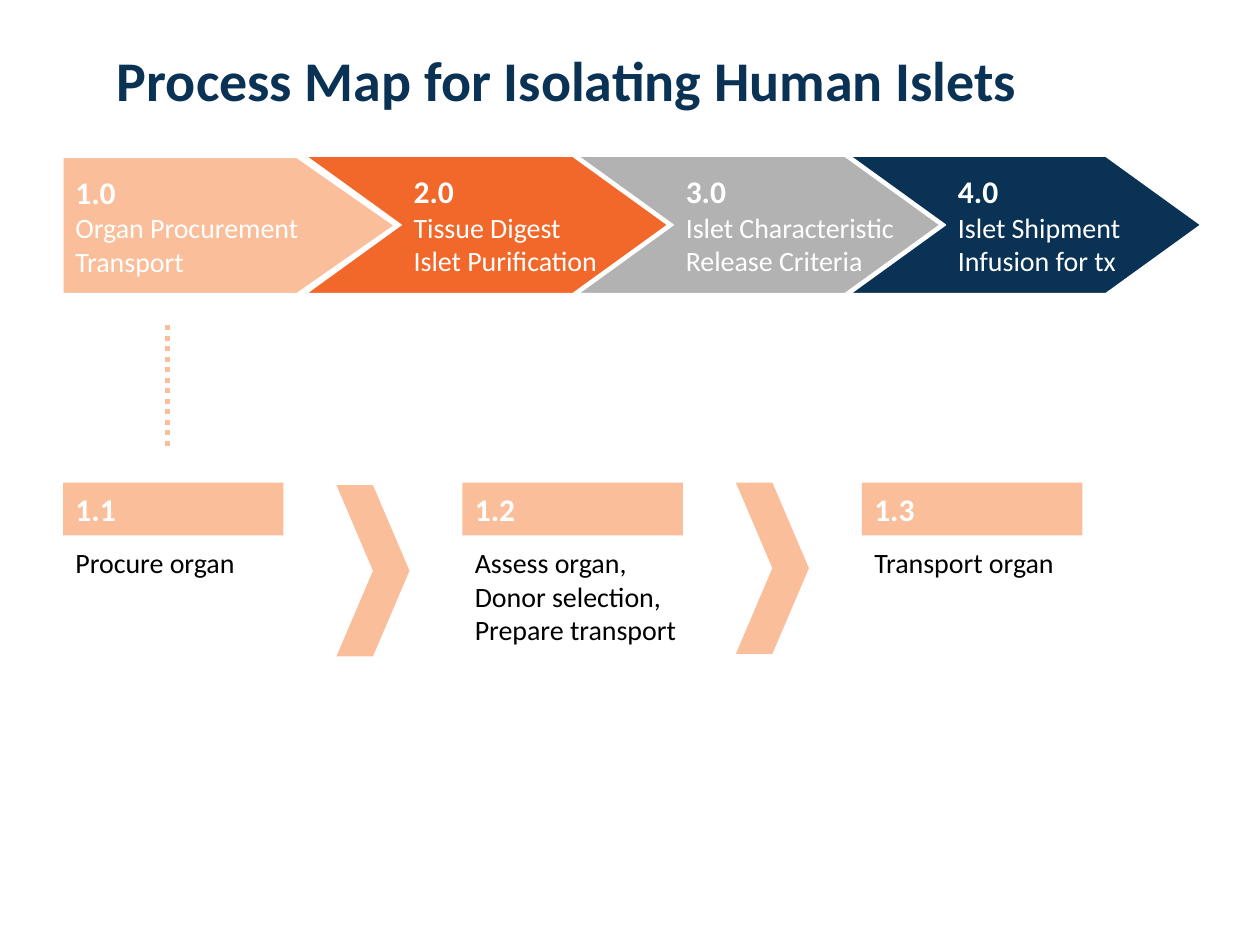
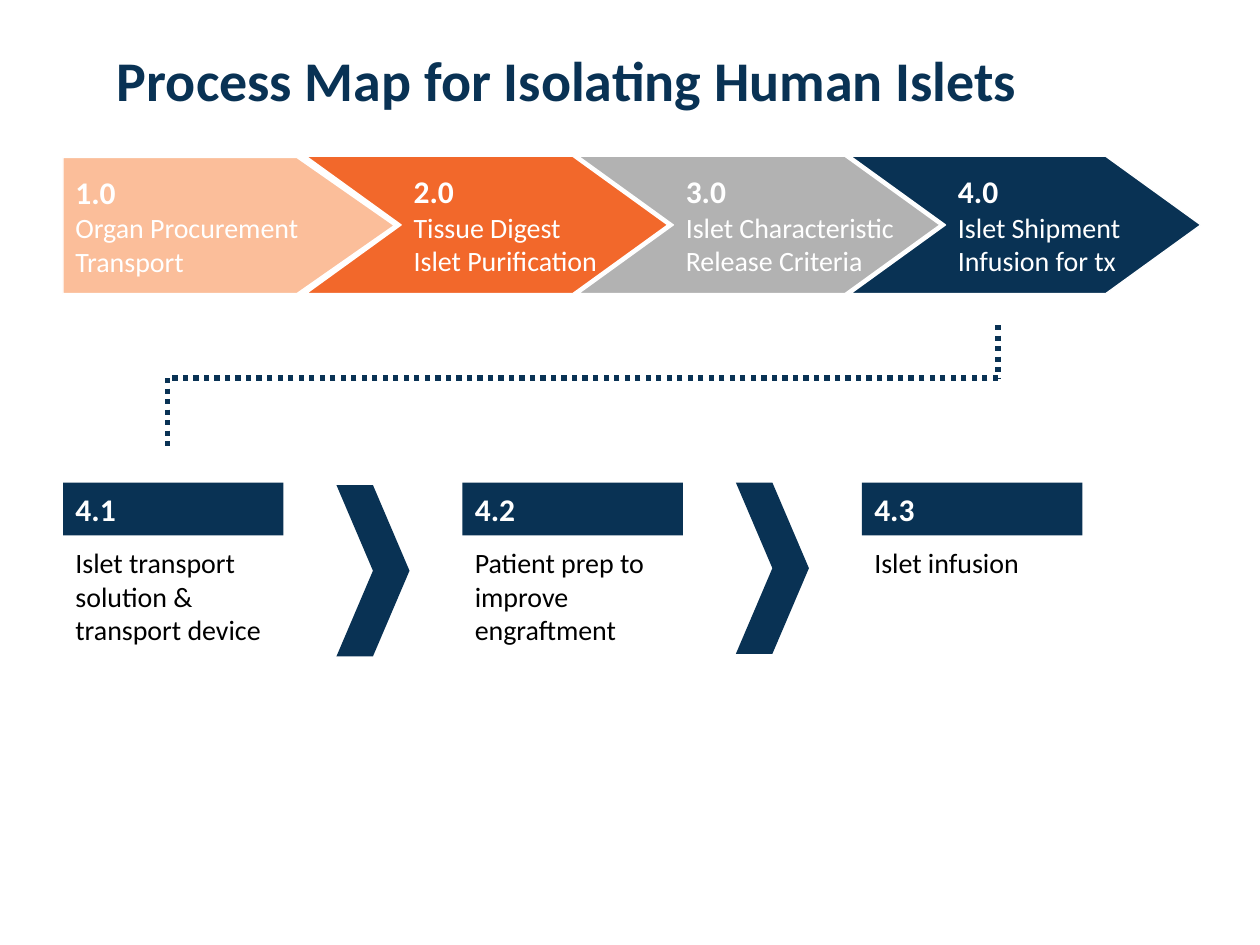
from dataclasses import dataclass

from lxml import etree
from pptx import Presentation
from pptx import util as u
from pptx.dml.color import RGBColor
from pptx.enum import dml, shapes, text
from pptx.oxml import ns


@dataclass(frozen=True)
class Theme:
    font: str = "Calibri"
    navy: str = "093254"
    orange: str = "F2682B"
    peach: str = "FBBE9A"
    grey: str = "B2B2B2"
    white: str = "FFFFFF"
    black: str = "000000"
    title_size: int = 32
    number_size: int = 18
    body_size: int = 16


THEME = Theme()
TITLE = "Process Map for Isolating Human Islets"
STAGES = [
    ("1.0", ["Organ Procurement", "Transport"], THEME.peach),
    ("2.0", ["Tissue Digest", "Islet Purification"], THEME.orange),
    ("3.0", ["Islet Characteristic", "Release Criteria"], THEME.grey),
    ("4.0", ["Islet Shipment", "Infusion for tx"], THEME.navy),
]
STAGE_LEFT, STAGE_PITCH = 2.43, 2.16
STEP_LEFT, STEP_PITCH, STEP_TOP = 0.5, 3.17, 3.83
ARROW_LEFT, ARROW_TOPS = 2.67, (3.85, 3.83)
DROP_X, DROP_TOP, DROP_BOTTOM = 1.33, 2.58, 3.58
TURN_Y, LAST_STAGE_X = 3, 7.92


class ProcessMap:
    def __init__(self, theme):
        self.theme = theme
        self.deck = Presentation()
        self.deck.slide_width = u.Inches(10)
        self.deck.slide_height = u.Inches(7.5)
        self.page = None

    def add_page(self, title):
        self.page = self.deck.slides.add_slide(self.deck.slide_layouts[5])
        box = self.page.shapes.title
        box.left, box.top = u.Inches(0), u.Inches(0)
        box.width, box.height = u.Inches(9), u.Inches(1.25)
        box.text_frame.vertical_anchor = text.MSO_ANCHOR.MIDDLE
        para = box.text_frame.paragraphs[0]
        para.alignment = text.PP_ALIGN.CENTER
        self.add_span(para, title, self.theme.title_size, self.theme.navy, True)

    def add_span(self, para, words, size, color, bold=False):
        span = para.add_run()
        span.text = words
        span.font.name = self.theme.font
        span.font.size = u.Pt(size)
        span.font.bold = bold
        span.font.color.rgb = RGBColor.from_string(color)

    def add_text(self, frame, color, number=None, lines=()):
        entries = [(number, self.theme.number_size, True)] if number else []
        entries += [(line, self.theme.body_size, False) for line in lines]
        for index, (words, size, bold) in enumerate(entries):
            para = frame.add_paragraph() if index else frame.paragraphs[0]
            para.alignment = text.PP_ALIGN.LEFT
            self.add_span(para, words, size, color, bold)

    def add_block(self, kind, left, top, width, height, fill, point=None, outline=None):
        block = self.page.shapes.add_shape(
            kind, u.Inches(left), u.Inches(top), u.Inches(width), u.Inches(height))
        block.shadow.inherit = False
        block.fill.solid()
        block.fill.fore_color.rgb = RGBColor.from_string(fill)
        if point:
            block.adjustments[0] = point
        if outline:
            block.line.color.rgb = RGBColor.from_string(outline)
            block.line.width = u.Pt(0.75)
        else:
            block.line.fill.background()
        block.text_frame.vertical_anchor = text.MSO_ANCHOR.MIDDLE
        return block

    def add_note(self, left, top, width, height, lines):
        box = self.page.shapes.add_textbox(
            u.Inches(left), u.Inches(top), u.Inches(width), u.Inches(height))
        box.text_frame.word_wrap = True
        self.add_text(box.text_frame, self.theme.black, lines=lines)

    def add_dotted_line(self, start, end, color):
        line = self.page.shapes.add_connector(
            shapes.MSO_CONNECTOR.STRAIGHT, *map(u.Inches, (*start, *end)))
        line.line.color.rgb = RGBColor.from_string(color)
        line.line.width = u.Pt(3)
        line.line.dash_style = dml.MSO_LINE.ROUND_DOT
        etree.SubElement(line.element.spPr, ns.qn("a:effectLst"))

    def add_route(self, points, color):
        for start, end in zip(points, points[1:]):
            self.add_dotted_line(start, end, color)

    def add_stages(self):
        for index in (0, 2, 1, 3):
            number, lines, color = STAGES[index]
            if index == 0:
                kind, point = shapes.MSO_SHAPE.PENTAGON, 0.716
                place = (0.5, 1.25, 2.63, 1.08)
            else:
                kind, point = shapes.MSO_SHAPE.CHEVRON, 0.692
                left = STAGE_LEFT + STAGE_PITCH * (index - 1)
                place = (left, 1.24, 2.78 if index == 3 else 2.87, 1.09)
            block = self.add_block(kind, *place, color, point, self.theme.white)
            block.text_frame.word_wrap = False
            self.add_text(block.text_frame, self.theme.white, number, lines)

    def add_steps(self, stage, steps, color):
        for index, lines in enumerate(steps):
            left = STEP_LEFT + STEP_PITCH * index
            header = self.add_block(
                shapes.MSO_SHAPE.RECTANGLE, left, STEP_TOP, 1.75, 0.42, color)
            self.add_text(header.text_frame, self.theme.white, f"{stage}.{index + 1}")
            self.add_note(left, 4.28, 1.89, 0.91, lines)
        for index, top in enumerate(ARROW_TOPS):
            self.add_block(shapes.MSO_SHAPE.CHEVRON, ARROW_LEFT + STEP_PITCH * index,
                           top, 0.58, 1.36, color)


def main():
    pages = [
        (1, THEME.peach, [(DROP_X, DROP_TOP), (DROP_X, DROP_BOTTOM)],
         [["Procure organ"],
          ["Assess organ,", "Donor selection,", "Prepare transport"],
          ["Transport organ"]]),
        (4, THEME.navy,
         [(LAST_STAGE_X, DROP_TOP), (LAST_STAGE_X, TURN_Y),
          (DROP_X, TURN_Y), (DROP_X, DROP_BOTTOM)],
         [["Islet transport solution & transport device"],
          ["Patient prep to improve engraftment"],
          ["Islet infusion"]]),
    ]
    process_map = ProcessMap(THEME)
    for stage, color, route, steps in pages:
        process_map.add_page(TITLE)
        process_map.add_route(route, color)
        process_map.add_steps(stage, steps, color)
        process_map.add_stages()
    process_map.deck.save("out.pptx")


if __name__ == "__main__":
    main()
